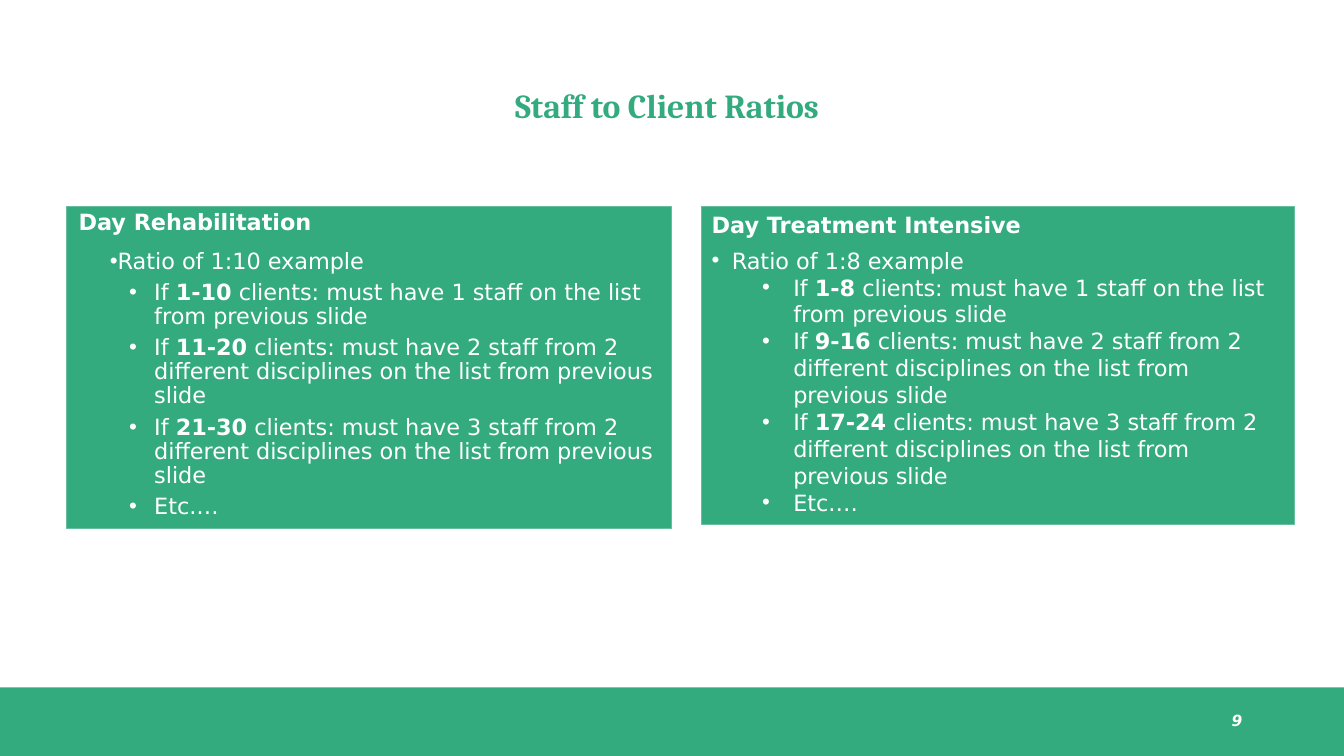
from dataclasses import dataclass

from lxml.etree import SubElement
from pptx import Presentation
from pptx.dml.color import RGBColor
from pptx.enum.shapes import MSO_SHAPE
from pptx.enum.text import MSO_ANCHOR, PP_ALIGN
from pptx.oxml.ns import qn
from pptx.util import Inches, Pt


@dataclass(frozen=True)
class Theme:
    green: RGBColor = RGBColor(0x33, 0xAB, 0x7E)
    border: RGBColor = RGBColor(0x66, 0xC0, 0x9E)
    white: RGBColor = RGBColor(0xFF, 0xFF, 0xFF)
    heading_font: str = "Cambria"
    body_font: str = "DejaVu Sans"
    title_size: int = 24
    body_size: int = 16
    number_size: int = 11


@dataclass(frozen=True)
class CardLayout:
    """Indents are (left margin, first line) in inches; spaces are in points."""
    ratio_indent: tuple
    rule_indent: tuple
    inset_left: float = 0.1
    line_spacing: float = 1.0
    heading_after: int = 0
    ratio_before: int = 0
    rule_before: int = 0


THEME = Theme()
REHAB_LAYOUT = CardLayout((0.2, 0.11), (0.75, -0.25), inset_left=0.12,
                          line_spacing=0.9, ratio_before=10, rule_before=5)
INTENSIVE_LAYOUT = CardLayout((0.2, -0.2), (0.81, -0.31), heading_after=6)

ONE_STAFF = "1 staff on the list from previous slide"
SEVERAL_STAFF = "{} staff from 2 different disciplines on the list from previous slide"
STAFF_RULES = [ONE_STAFF, SEVERAL_STAFF.format(2), SEVERAL_STAFF.format(3)]


def add_run(p, text, size, color, font=THEME.body_font, bold=False, italic=False):
    r = p.add_run()
    r.text = text
    r.font.name, r.font.size = font, Pt(size)
    r.font.bold, r.font.italic = bold, italic
    r.font.color.rgb = color


def add_body_run(p, text, bold=False):
    add_run(p, text, THEME.body_size, THEME.white, bold=bold)


def add_bullet(tf, indent, line_spacing, before, level=0):
    p = tf.add_paragraph()
    p.level = level
    p.line_spacing = line_spacing
    p.space_before = Pt(before)
    pPr = p._p.get_or_add_pPr()
    margin, first_line = indent
    pPr.set("marL", str(Inches(margin)))
    pPr.set("indent", str(Inches(first_line)))
    SubElement(pPr, qn("a:buFont")).set("typeface", "Arial")
    SubElement(pPr, qn("a:buChar")).set("char", "•")
    return p


def add_panel(s, box, border=None):
    sp = s.shapes.add_shape(MSO_SHAPE.RECTANGLE, *map(Inches, box))
    sp.shadow.inherit = False
    sp.fill.solid()
    sp.fill.fore_color.rgb = THEME.green
    if border is None:
        sp.line.fill.background()
    else:
        sp.line.color.rgb = border
        sp.line.width = Pt(0.75)
    return sp


def add_label(s, box, align):
    """Add a vertically centred text box and return its paragraph."""
    tf = s.shapes.add_textbox(*map(Inches, box)).text_frame
    tf.word_wrap = True
    tf.vertical_anchor = MSO_ANCHOR.MIDDLE
    p = tf.paragraphs[0]
    p.alignment = align
    return p


def add_title(s, box, text):
    p = add_label(s, box, PP_ALIGN.CENTER)
    p.line_spacing = 0.9
    add_run(p, text, THEME.title_size, THEME.green, THEME.heading_font, bold=True)


def add_footer(s, box, number):
    add_panel(s, box)
    left, top, width, _ = box
    p = add_label(s, (left + width - 3.91, top + 0.13, 3, 0.4), PP_ALIGN.RIGHT)
    add_run(p, number, THEME.number_size, THEME.white, bold=True, italic=True)


def add_ratio_card(s, box, heading, ratio, client_ranges, layout):
    tf = add_panel(s, box, THEME.border).text_frame
    tf.word_wrap = True
    tf.vertical_anchor = MSO_ANCHOR.TOP
    tf.margin_left = Inches(layout.inset_left)
    p = tf.paragraphs[0]
    p.line_spacing = layout.line_spacing
    p.space_after = Pt(layout.heading_after)
    add_body_run(p, heading, bold=True)

    p = add_bullet(tf, layout.ratio_indent, layout.line_spacing, layout.ratio_before)
    add_body_run(p, f"Ratio of {ratio} example")

    rules = [(("If ", False), (clients, True), (f" clients: must have {staff}", False))
             for clients, staff in zip(client_ranges, STAFF_RULES)]
    for rule in rules + [(("Etc.…", False),)]:
        p = add_bullet(tf, layout.rule_indent, layout.line_spacing,
                       layout.rule_before, level=1)
        for text, bold in rule:
            add_body_run(p, text, bold)
    for p in tf.paragraphs:
        p.alignment = PP_ALIGN.LEFT


def main():
    prs = Presentation()
    prs.slide_width, prs.slide_height = Inches(13.33), Inches(7.5)
    s = prs.slides.add_slide(prs.slide_layouts[6])
    add_footer(s, (0, 6.82, 13.33, 0.68), "9")
    add_title(s, (3.39, 0.59, 6.45, 0.95), "Staff to Client Ratios")
    add_ratio_card(s, (0.66, 2.05, 6, 3.19), "Day Rehabilitation", "1:10",
                   ["1-10", "11-20", "21-30"], REHAB_LAYOUT)
    add_ratio_card(s, (6.96, 2.05, 5.88, 3.15), "Day Treatment Intensive", "1:8",
                   ["1-8", "9-16", "17-24"], INTENSIVE_LAYOUT)
    prs.save("out.pptx")


if __name__ == "__main__":
    main()
